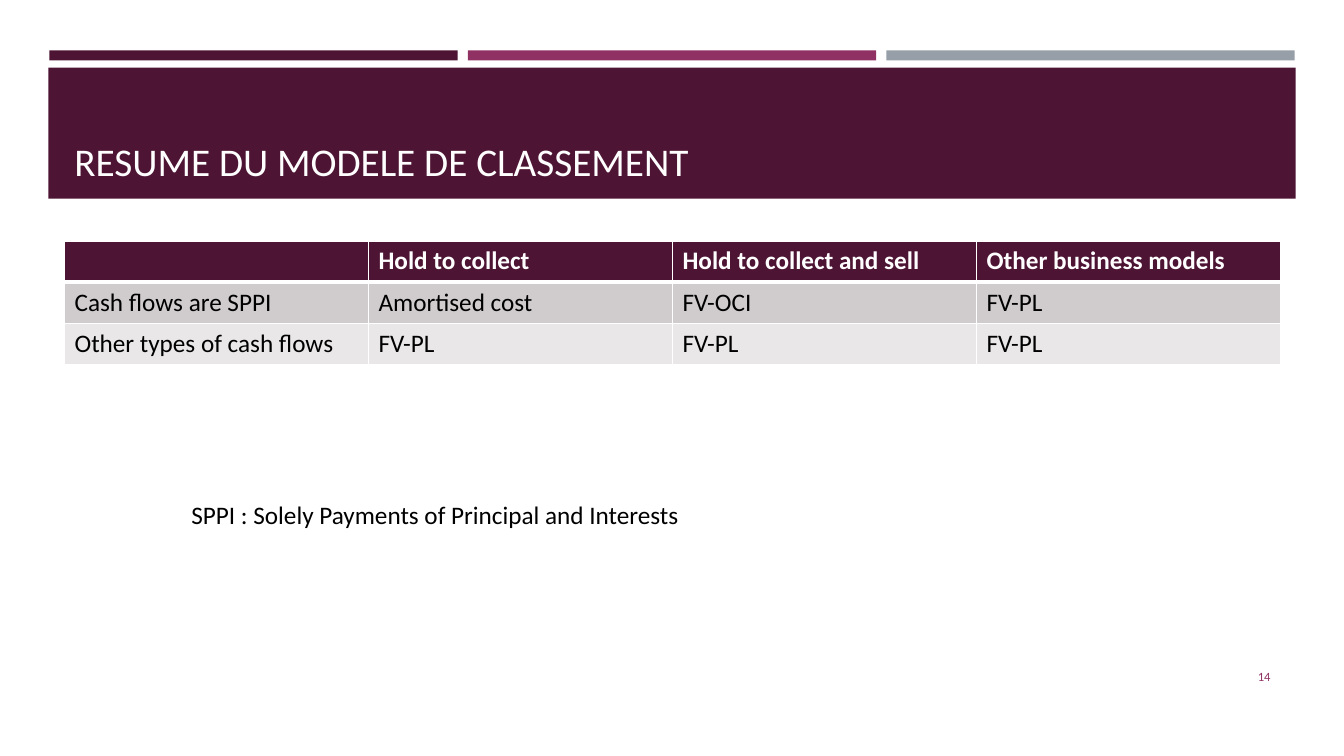
"""Build the slide that sums up the classification model."""
from lxml.etree import SubElement
from pptx import Presentation
from pptx.dml.color import RGBColor
from pptx.enum.shapes import MSO_SHAPE
from pptx.enum.text import MSO_ANCHOR, PP_ALIGN
from pptx.oxml.ns import qn
from pptx.util import Inches, Pt

FONT = "Calibri"
PLUM, WHITE, BLACK, ROSE, GREY = "4D1434", "FFFFFF", "000000", "903163", "969FA7"

TITLE = "RESUME DU MODELE DE CLASSEMENT"
NOTE = "SPPI : Solely Payments of Principal and Interests"
PAGE = "14"
ROWS = [
    ("", "Hold to collect", "Hold to collect and sell", "Other business models"),
    ("Cash flows are SPPI", "Amortised cost", "FV-OCI", "FV-PL"),
    ("Other types of cash flows", "FV-PL", "FV-PL", "FV-PL"),
]
ROW_FILLS = [PLUM, "D0CCCE", "E9E7E8"]
STRIPES = [PLUM, ROSE, GREY]
STRIPE_LEFT, STRIPE_STEP, STRIPE_WIDTH = 0.49, 4.15, 4.05
TABLE_LEFT, TABLE_TOP, TABLE_WIDTH, ROW_HEIGHT = 0.64, 2.39, 12.06, 0.41


def rgb(color):
    return RGBColor.from_string(color)


def style(p, size, color, bold=False):
    p.font.name = FONT
    p.font.size = Pt(size)
    p.font.bold = bold
    p.font.color.rgb = rgb(color)


def add_bar(s, left, top, width, height, color):
    sp = s.shapes.add_shape(MSO_SHAPE.RECTANGLE, *map(Inches, (left, top, width, height)))
    sp.shadow.inherit = False
    sp.fill.solid()
    sp.fill.fore_color.rgb = rgb(color)
    sp.line.fill.background()


def add_text(s, box, text, size, color, anchor=MSO_ANCHOR.TOP, align=PP_ALIGN.LEFT):
    tf = s.shapes.add_textbox(*map(Inches, box)).text_frame
    tf.word_wrap = True
    tf.vertical_anchor = anchor
    p = tf.paragraphs[0]
    p.text = text
    p.alignment = align
    style(p, size, color)


def add_borders(cell, top, bottom):
    tc_pr = cell._tc.get_or_add_tcPr()
    for side, width in (("L", 1), ("R", 1), ("T", top), ("B", bottom)):
        ln = SubElement(tc_pr, qn(f"a:ln{side}"), w=str(Pt(width)))
        SubElement(SubElement(ln, qn("a:solidFill")), qn("a:srgbClr"), val=WHITE)


def add_model_table(s):
    box = (TABLE_LEFT, TABLE_TOP, TABLE_WIDTH, ROW_HEIGHT * len(ROWS))
    table = s.shapes.add_table(len(ROWS), len(ROWS[0]), *map(Inches, box)).table
    for i, (row, fill) in enumerate(zip(ROWS, ROW_FILLS)):
        header = i == 0
        for j, text in enumerate(row):
            cell = table.cell(i, j)
            add_borders(cell, 3 if i == 1 else 1, 3 if header else 1)
            cell.fill.solid()
            cell.fill.fore_color.rgb = rgb(fill)
            p = cell.text_frame.paragraphs[0]
            p.text = text
            style(p, 18, WHITE if header else BLACK, header)


def main():
    prs = Presentation()
    prs.slide_width, prs.slide_height = Inches(13.33), Inches(7.5)
    s = prs.slides.add_slide(prs.slide_layouts[6])
    for i, color in enumerate(STRIPES):
        add_bar(s, STRIPE_LEFT + i * STRIPE_STEP, 0.5, STRIPE_WIDTH, 0.1, color)
    add_bar(s, 0.48, 0.67, 12.37, 1.3, PLUM)
    add_text(s, (0.64, 0.77, 12.06, 1.11), TITLE, 28, WHITE, MSO_ANCHOR.BOTTOM)
    add_model_table(s)
    add_text(s, (1.8, 4.9, 5.9, 0.4), NOTE, 18, BLACK)
    add_text(s, (11.55, 6.51, 1.15, 0.4), PAGE, 9, ROSE, MSO_ANCHOR.MIDDLE, PP_ALIGN.RIGHT)
    prs.save("out.pptx")


if __name__ == "__main__":
    main()
